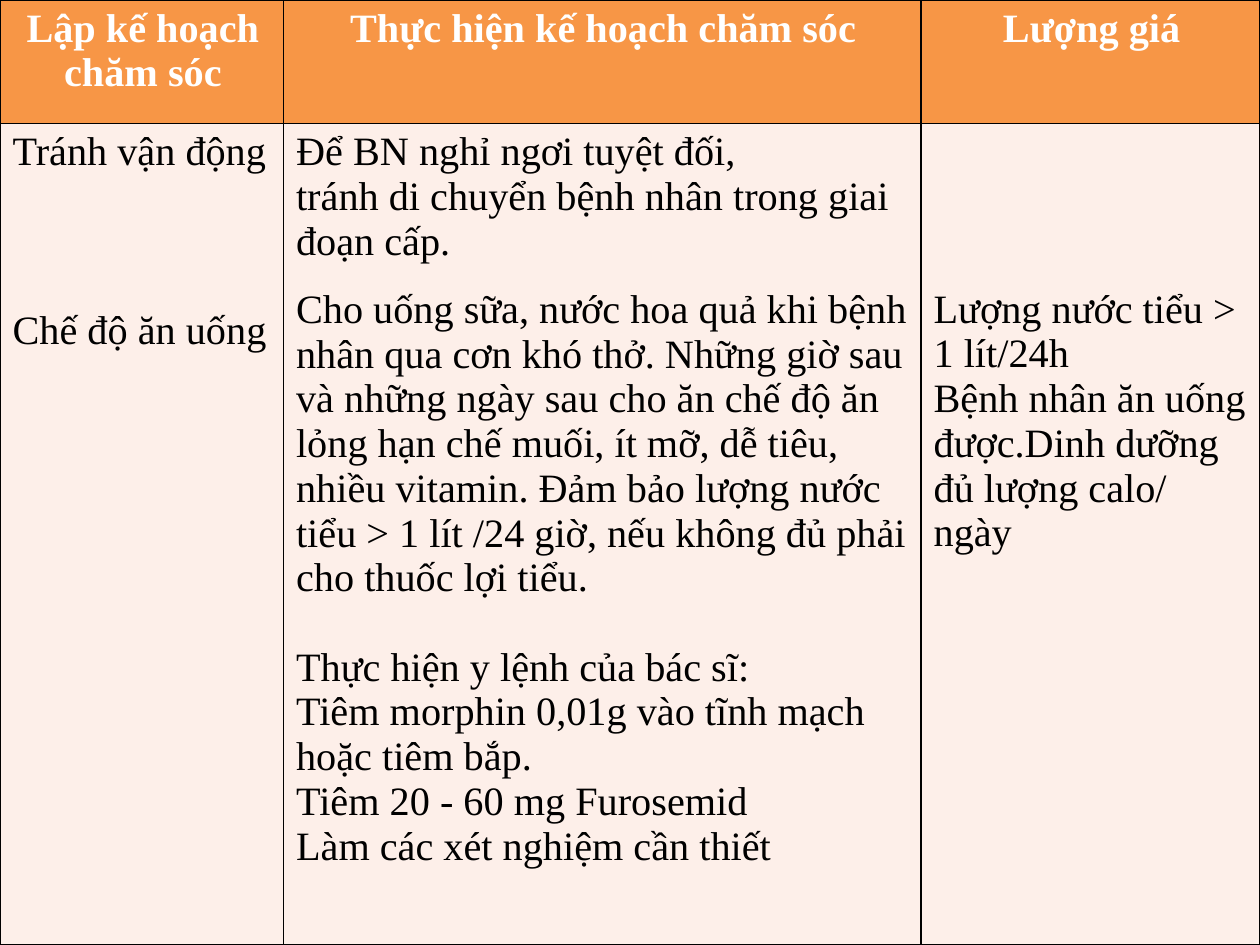
from lxml.etree import SubElement
from pptx import Presentation
from pptx.dml.color import RGBColor
from pptx.enum.text import PP_ALIGN as Align
from pptx.oxml.ns import qn
from pptx.util import Inches, Pt

COLORS = {"header": "F79646", "body": "FDEFE9", "border": "000000",
          "header_text": "FFFFFF", "body_text": "000000"}


def write(cell, text, before=0, first=False, color="body_text", bold=False, align=Align.LEFT):
    frame = cell.text_frame
    paragraph = frame.paragraphs[0] if first else frame.add_paragraph()
    paragraph.alignment = align
    paragraph.space_before = Pt(before)
    run = paragraph.add_run()
    run.text = text
    run.font.name = "Times New Roman"
    run.font.size = Pt(23)
    run.font.bold = bold
    run.font.color.rgb = RGBColor.from_string(COLORS[color])


def style(cell, fill):
    properties = cell._tc.get_or_add_tcPr()
    for side in ("lnL", "lnR", "lnT", "lnB"):
        border = SubElement(properties, qn(f"a:{side}"), w=str(Pt(1)))
        solid = SubElement(border, qn("a:solidFill"))
        SubElement(solid, qn("a:srgbClr"), val=COLORS["border"])
    cell.fill.solid()
    cell.fill.fore_color.rgb = RGBColor.from_string(COLORS[fill])
    cell.margin_right = Inches(0.08)


columns = [
    ("Lập kế hoạch chăm sóc", 2.25, 0.05, [
        ("Tránh vận động", 0),
        ("Chế độ ăn uống", 76.6),
    ]),
    ("Thực hiện kế hoạch chăm sóc", 5.06, 0.05, [
        ("Để BN nghỉ ngơi tuyệt đối,", 0),
        ("tránh di chuyển bệnh nhân trong giai đoạn cấp.", 0),
        ("Cho uống sữa, nước hoa quả khi bệnh nhân qua cơn khó thở. "
         "Những giờ sau và những ngày sau cho ăn chế độ ăn lỏng hạn chế muối, "
         "ít mỡ, dễ tiêu, nhiều vitamin. Đảm bảo lượng nước tiểu > 1 lít /24 giờ, "
         "nếu không đủ phải cho thuốc lợi tiểu.", 13.4),
        ("Thực hiện y lệnh của bác sĩ:", 25.5),
        ("Tiêm morphin 0,01g vào tĩnh mạch hoặc tiêm bắp.", 0),
        ("Tiêm 20 - 60 mg Furosemid", 0),
        ("Làm các xét nghiệm cần thiết", 0),
    ]),
    ("Lượng giá", 2.69, 1.3, [
        ("Lượng nước tiểu > 1 lít/24h", 0),
        ("Bệnh nhân ăn uống được.Dinh dưỡng đủ lượng calo/ ngày", 0),
    ]),
]

prs = Presentation()
prs.slide_width, prs.slide_height = Inches(10), Inches(7.5)
slide = prs.slides.add_slide(prs.slide_layouts[6])
care_plan = slide.shapes.add_table(2, len(columns), 0, 0, Inches(10), Inches(7.5)).table
for row, height in zip(care_plan.rows, (0.98, 6.52)):
    row.height = Inches(height)

for index, (heading, width, top_margin, entries) in enumerate(columns):
    care_plan.columns[index].width = Inches(width)
    header, body = care_plan.cell(0, index), care_plan.cell(1, index)
    style(header, "header")
    style(body, "body")
    body.margin_top = Inches(top_margin)
    write(header, heading, first=True, color="header_text", bold=True, align=Align.CENTER)
    for position, (entry, gap) in enumerate(entries):
        write(body, entry, before=gap, first=position == 0)

prs.save("out.pptx")
